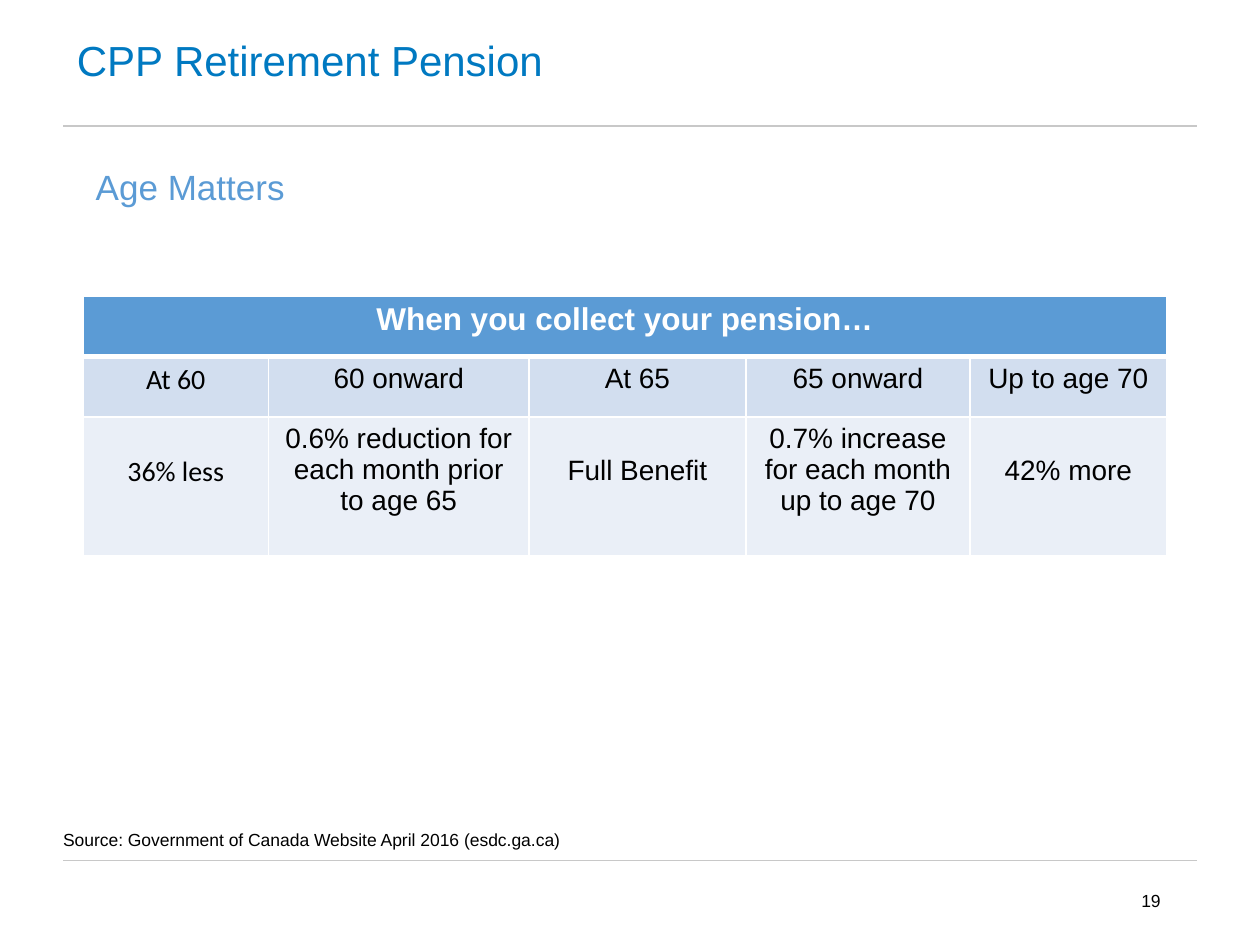
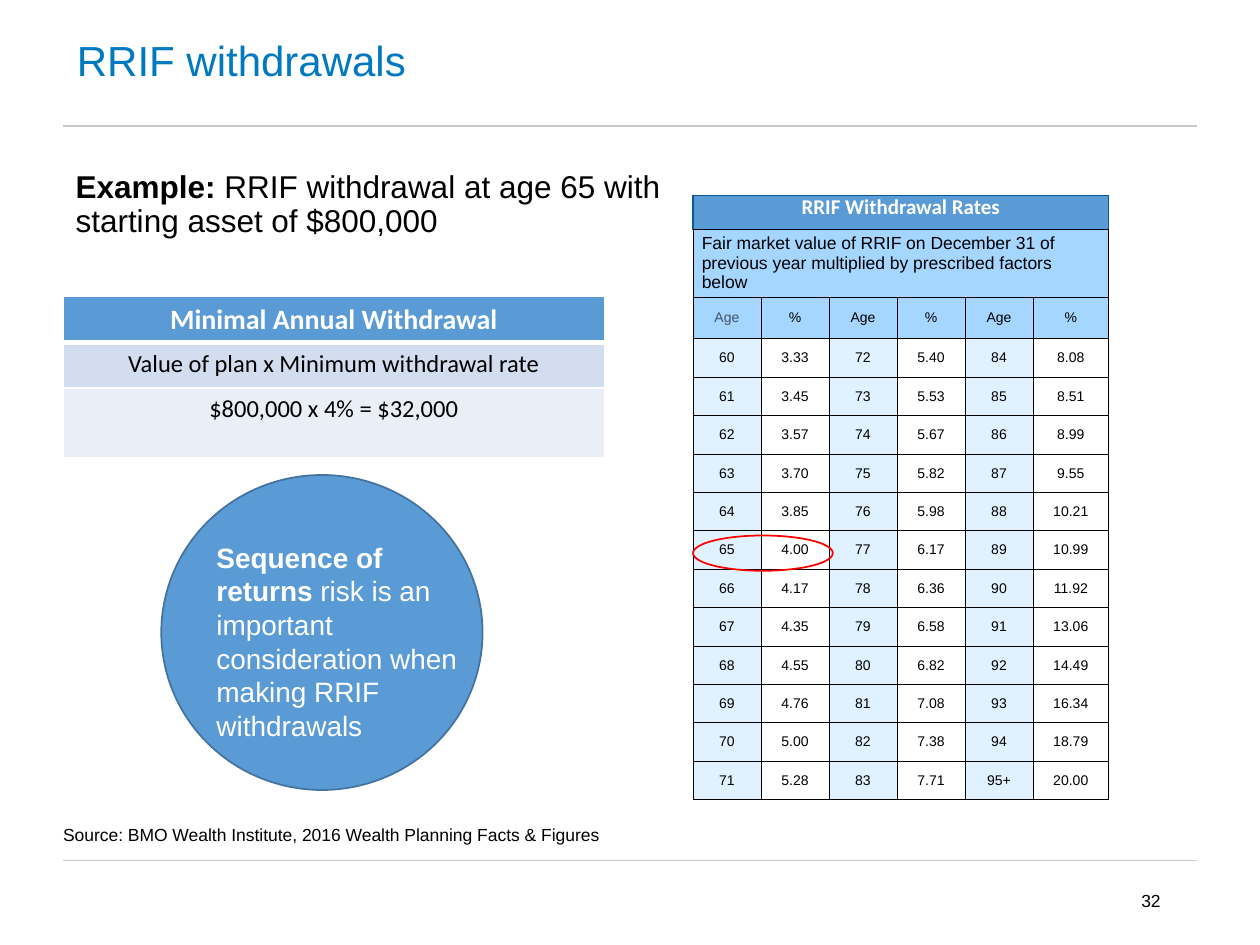
"""Build two retirement income slides: CPP pension timing and RRIF withdrawals."""
from pptx import Presentation
from pptx import util as u
from pptx.dml.color import RGBColor
from pptx.enum import shapes, text
from pptx.oxml import xmlchemy as xc
from pptx.oxml.ns import qn

TITLE_BLUE = RGBColor(0x00, 0x79, 0xC1)
ACCENT = RGBColor(0x5B, 0x9B, 0xD5)
ACCENT_EDGE = RGBColor(0x43, 0x73, 0x9E)
BAND_DARK = RGBColor(0xD2, 0xDE, 0xEF)
BAND_LIGHT = RGBColor(0xEA, 0xEF, 0xF7)
RATE_HEAD = RGBColor(0xA5, 0xD6, 0xFF)
RATE_AGE = RGBColor(0xE0, 0xF1, 0xFF)
RATE_EDGE = RGBColor(0x0B, 0x59, 0x99)
SLATE = RGBColor(0x44, 0x54, 0x6A)
RULE_GREY = RGBColor(0xC8, 0xC8, 0xC8)
RED = RGBColor(0xFF, 0x00, 0x00)
BLACK = RGBColor(0, 0, 0)
WHITE = RGBColor(0xFF, 0xFF, 0xFF)

LEFT, CENTER, RIGHT = text.PP_ALIGN.LEFT, text.PP_ALIGN.CENTER, text.PP_ALIGN.RIGHT
TOP, MIDDLE, BOTTOM = (text.MSO_ANCHOR.TOP, text.MSO_ANCHOR.MIDDLE,
                       text.MSO_ANCHOR.BOTTOM)

RATES = [
    "3.33 3.45 3.57 3.70 3.85 4.00 4.17 4.35 4.55 4.76 5.00 5.28".split(),
    "5.40 5.53 5.67 5.82 5.98 6.17 6.36 6.58 6.82 7.08 7.38 7.71".split(),
    "8.08 8.51 8.99 9.55 10.21 10.99 11.92 13.06 14.49 16.34 18.79 20.00".split(),
]
FIRST_AGE, LAST_AGE = 60, 95


def inches(*lengths):
    """Convert several lengths to Inches."""
    return [u.Inches(length) for length in lengths]


def write(paragraph, wording, size, color=BLACK, font="Arial", bold=False, align=LEFT):
    """Set a paragraph's text, with an optional bold lead, and format its runs."""
    lead, rest = wording if isinstance(wording, tuple) else (wording, None)
    paragraph.text = lead
    if rest:
        paragraph.add_run().text = rest
    paragraph.alignment = align
    for position, run in enumerate(paragraph.runs):
        run.font.size = u.Pt(size)
        run.font.name = font
        run.font.color.rgb = color
        run.font.bold = position == 0 if rest else bold


def fill_placeholder(holder, box, wording, size, color, anchor):
    """Move a title or body placeholder and give it one unbulleted paragraph."""
    holder.left, holder.top, holder.width, holder.height = inches(*box)
    frame = holder.text_frame
    frame.auto_size = text.MSO_AUTO_SIZE.NONE
    frame.vertical_anchor = anchor
    paragraph = frame.paragraphs[0]
    properties = paragraph._p.get_or_add_pPr()
    properties.set("marL", "0")
    properties.set("indent", "0")
    properties.append(xc.OxmlElement("a:buNone"))
    paragraph.line_spacing = 0.9
    paragraph.space_before = u.Pt(0)
    write(paragraph, wording, size, color)


def add_text(parent, box, wording, size, color=BLACK, align=LEFT, anchor=TOP, inset=True):
    """Add a wrapping text box."""
    frame = parent.add_textbox(*inches(*box)).text_frame
    frame.word_wrap = True
    frame.vertical_anchor = anchor
    if not inset:
        frame.margin_left = frame.margin_right = 0
        frame.margin_top = frame.margin_bottom = 0
    write(frame.paragraphs[0], wording, size, color, align=align)


def add_rule(slide, top):
    """Draw a grey line across the slide."""
    rule = slide.shapes.add_connector(shapes.MSO_CONNECTOR.STRAIGHT,
                                      *inches(0.5, top, 9.5, top))
    rule.line.color.rgb = RULE_GREY
    rule.line.width = u.Pt(0.75)
    rule._element.spPr.append(xc.OxmlElement("a:effectLst"))


def add_ellipse(parent, box, edge, fill=None):
    """Add an ellipse, hollow unless a fill is given."""
    ellipse = parent.add_shape(shapes.MSO_SHAPE.OVAL, *inches(*box))
    ellipse.shadow.inherit = False
    ellipse.line.color.rgb = edge
    ellipse.line.width = u.Pt(1)
    if fill is None:
        ellipse.fill.background()
    else:
        ellipse.fill.solid()
        ellipse.fill.fore_color.rgb = fill


def add_page(deck, title, number, lead, lead_box, lead_size, lead_color, source, source_top):
    """Add a slide with title, rules, lead text, source line and page number."""
    slide = deck.slides.add_slide(deck.slide_layouts[1])
    add_rule(slide, 1)
    add_rule(slide, 6.83)
    fill_placeholder(slide.shapes.title, (0.51, 0, 9, 1), title, 24, TITLE_BLUE, MIDDLE)
    fill_placeholder(slide.placeholders[1], lead_box, lead, lead_size, lead_color, TOP)
    add_text(slide.shapes, (0.5, source_top, 8.99, 0.37), source, 10,
             anchor=BOTTOM, inset=False)
    add_text(slide.shapes, (7.06, 6.95, 2.25, 0.4), number, 10, align=RIGHT, anchor=MIDDLE)
    return slide


def add_grid(slide, left, top, widths, heights):
    """Add an unbanded table with the given column widths and row heights."""
    frame = slide.shapes.add_table(len(heights), len(widths),
                                   *inches(left, top, sum(widths), sum(heights)))
    table = frame.table
    table.first_row = table.horz_banding = False
    for column, width in zip(table.columns, widths):
        column.width = u.Inches(width)
    for row, height in zip(table.rows, heights):
        row.height = u.Inches(height)
    return table


def paint(cell, fill, edge, width, **special):
    """Set a cell's borders and fill; special maps L, R, T or B to (colour, width)."""
    properties = cell._tc.get_or_add_tcPr()
    for side in "LRTB":
        color, points = special.get(side, (edge, width))
        border = xc.OxmlElement(f"a:ln{side}")
        border.set("w", str(u.Pt(points)))
        solid = xc.OxmlElement("a:solidFill")
        tint = xc.OxmlElement("a:srgbClr")
        tint.set("val", str(color))
        solid.append(tint)
        border.append(solid)
        properties.append(border)
    cell.fill.solid()
    cell.fill.fore_color.rgb = fill


def paint_banded(table):
    """Give a table the blue heading and two pale bands, divided by white lines."""
    thick = (WHITE, 3)
    looks = [(ACCENT, {"B": thick}), (BAND_DARK, {"T": thick}), (BAND_LIGHT, {})]
    for row, (fill, special) in zip(table.rows, looks):
        for cell in row.cells:
            paint(cell, fill, WHITE, 1, **special)


def merge_row(table, row):
    """Merge a whole row and return its first cell."""
    first = table.cell(row, 0)
    first.merge(table.cell(row, len(table.columns) - 1))
    return first


def add_pension_table(slide):
    """Add the table of benefits by the age of collection."""
    table = add_grid(slide, 0.66, 2.35, [1.47, 2.07, 1.72, 1.78, 1.56], [0.48, 0.48, 1.1])
    paint_banded(table)
    write(merge_row(table, 0).text_frame.paragraphs[0], "When you collect your pension…",
          18, WHITE, bold=True, align=CENTER)
    benefits = [
        ("At 60", "36% less"),
        ("60 onward", "0.6% reduction for each month prior to age 65"),
        ("At 65", "Full Benefit"),
        ("65 onward", "0.7% increase for each month up to age 70"),
        ("Up to age 70", "42% more"),
    ]
    for column, (age, benefit) in enumerate(benefits):
        font = "Arial" if column else "Calibri"
        for row, wording in enumerate((age, benefit), start=1):
            write(table.cell(row, column).text_frame.paragraphs[0], wording, 16,
                  font=font, align=CENTER)
        if "month" not in benefit:
            table.cell(2, column).margin_top = u.Inches(0.3)


def add_withdrawal_table(slide):
    """Add the worked example of the minimum withdrawal."""
    table = add_grid(slide, 0.5, 2.35, [4.3], [0.37, 0.36, 0.55])
    paint_banded(table)
    lines = [("Minimal Annual Withdrawal", 16, WHITE),
             ("Value of plan x Minimum withdrawal rate", 14, BLACK),
             ("$800,000 x 4% = $32,000", 14, BLACK)]
    for row, (wording, size, color) in enumerate(lines):
        write(table.cell(row, 0).text_frame.paragraphs[0], wording, size, color, "Calibri",
              bold=row == 0, align=CENTER)


def write_rate(cell, wording, size=8, tight=True, **style):
    """Write one cell of the rate table."""
    cell.vertical_anchor = MIDDLE
    cell.margin_left = cell.margin_right = u.Inches(0.07)
    cell.margin_top = cell.margin_bottom = 0
    paragraph = cell.text_frame.paragraphs[0]
    paragraph.space_after = u.Pt(12)
    if tight:
        paragraph.line_spacing = u.Pt(9)
    write(paragraph, wording, size, **style)


def add_rate_table(slide):
    """Add the table of withdrawal rates by age."""
    heads = [0.27, 0.54, 0.33]
    count = len(RATES[0])
    step = (4.8 - sum(heads)) / count
    table = add_grid(slide, 5.5, 1.55, [0.54] * 5 + [0.6], heads + [step] * count)
    edge = (RATE_EDGE, 1)
    for cell in table.rows[0].cells:
        paint(cell, ACCENT, BLACK, 0.5, L=edge, T=edge, R=edge)
    for cell in table.rows[1].cells:
        paint(cell, RATE_HEAD, BLACK, 0.5)
    write_rate(merge_row(table, 0), "RRIF Withdrawal Rates", 12, color=WHITE,
               font="Calibri", bold=True, align=CENTER)
    write_rate(merge_row(table, 1), "Fair market value of RRIF on December 31 of previous "
               "year multiplied by prescribed factors below", 10, tight=False)
    for block, rates in enumerate(RATES):
        for offset, heading in enumerate(("Age", "%")):
            cell = table.cell(2, 2 * block + offset)
            paint(cell, RATE_HEAD, BLACK, 0.5)
            write_rate(cell, heading, align=CENTER,
                       color=BLACK if block or offset else SLATE)
        for index, rate in enumerate(rates):
            age = FIRST_AGE + block * count + index
            label = f"{age}+" if age == LAST_AGE else str(age)
            for offset, (wording, fill) in enumerate(((label, RATE_AGE), (rate, WHITE))):
                cell = table.cell(3 + index, 2 * block + offset)
                paint(cell, fill, BLACK, 0.5)
                write_rate(cell, wording, align=CENTER)


def add_risk_circle(slide):
    """Add the grouped circle and its warning."""
    risk = slide.shapes.add_group_shape().shapes
    add_ellipse(risk, (1.28, 3.77, 2.55, 2.5), ACCENT_EDGE, ACCENT)
    add_text(risk, (1.62, 4.24, 2.27, 1.84),
             ("Sequence of returns ",
              "risk is an important consideration when making RRIF withdrawals"), 16, WHITE)


def main():
    """Build and save the deck."""
    deck = Presentation()
    deck.slide_width, deck.slide_height = inches(10, 7.5)

    pension = add_page(deck, "CPP Retirement Pension", "19",
                       "Age Matters", (0.66, 1.3, 9, 0.64), 20, ACCENT,
                       "Source: Government of Canada Website April 2016 (esdc.ga.ca)", 6.38)
    add_pension_table(pension)

    withdrawals = add_page(deck, "RRIF withdrawals", "32",
                           ("Example: ", "RRIF withdrawal at age 65 with starting asset "
                            "of $800,000"), (0.5, 1.31, 4.95, 0.64), 18, BLACK,
                           "Source: BMO Wealth Institute, 2016 Wealth Planning Facts & Figures",
                           6.34)
    add_withdrawal_table(withdrawals)
    add_rate_table(withdrawals)
    add_ellipse(withdrawals.shapes, (5.5, 4.25, 1.11, 0.28), RED)
    add_risk_circle(withdrawals)

    deck.save("out.pptx")


if __name__ == "__main__":
    main()
